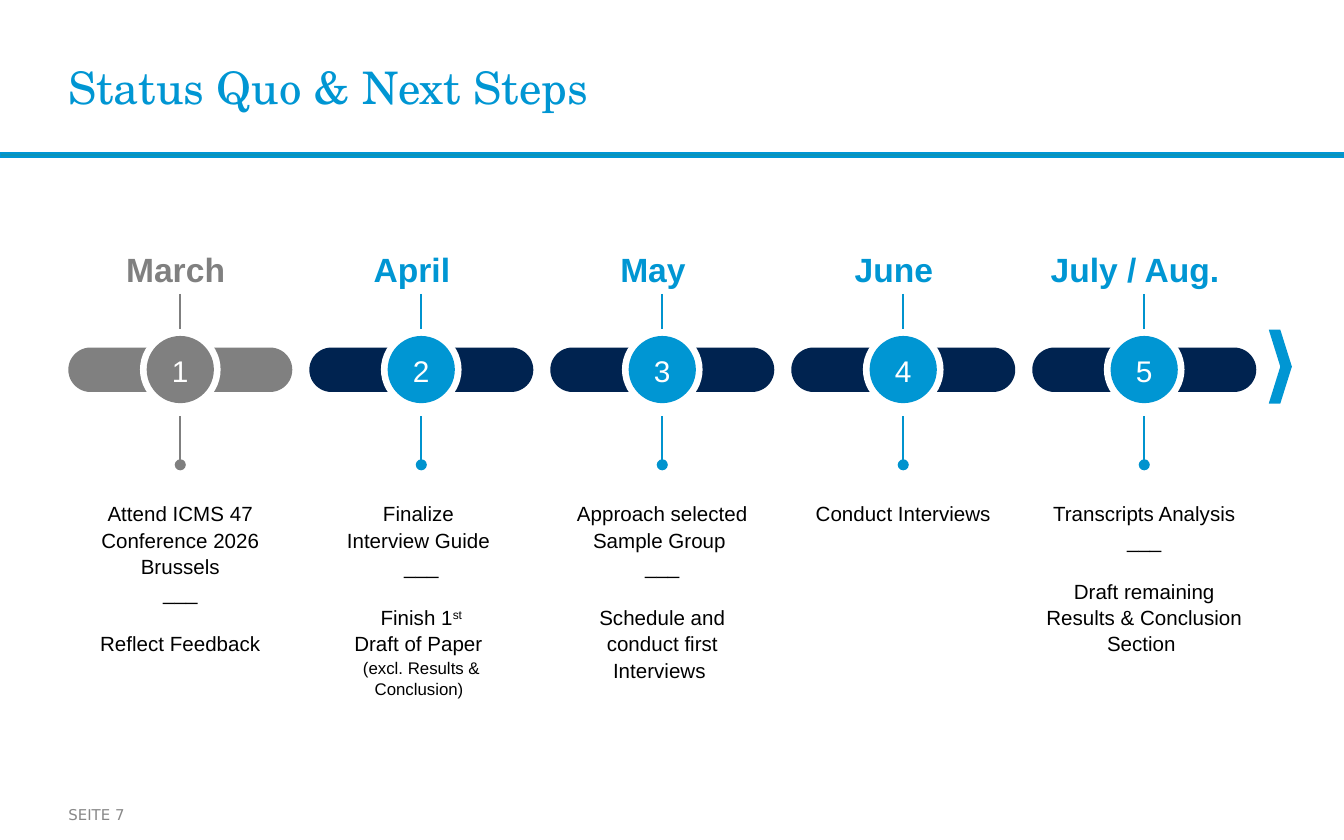
"""Build the Status Quo & Next Steps timeline slide."""
from lxml.etree import SubElement
from pptx import Presentation
from pptx.dml.color import RGBColor
from pptx.enum.shapes import MSO_CONNECTOR, MSO_SHAPE
from pptx.enum.text import MSO_ANCHOR, PP_ALIGN
from pptx.oxml.ns import qn
from pptx.util import Pt

theme = {
    "blue": RGBColor.from_string("0096D3"),
    "line": RGBColor.from_string("0093CE"),
    "rule": RGBColor.from_string("0C94B7"),
    "navy": RGBColor.from_string("002350"),
    "gray": RGBColor.from_string("808080"),
    "stem": RGBColor.from_string("7F7F7F"),
    "foot": RGBColor.from_string("888888"),
    "black": RGBColor.from_string("000000"),
    "white": RGBColor.from_string("FFFFFF"),
    "title": 24, "month": 18, "count": 16, "body": 11, "note": 9, "page": 8,
    "sans": "Arial", "serif": "TeX Gyre Schola", "small": "DejaVu Sans",
}

deck = Presentation()
deck.slide_width, deck.slide_height = Pt(720), Pt(450)
slide = deck.slides.add_slide(deck.slide_layouts[6])
shapes = slide.shapes


def draw(kind, x, y, w, h, fill):
    shape = shapes.add_shape(kind, Pt(x), Pt(y), Pt(w), Pt(h))
    shape.shadow.inherit = False
    shape.fill.solid()
    shape.fill.fore_color.rgb = theme[fill]
    shape.line.fill.background()
    return shape


def write(shape, *paras, size="body", color="black", font="sans", bold=False,
          align=PP_ALIGN.CENTER, anchor=MSO_ANCHOR.TOP, inset=(7.2, 3.6, 7.2, 3.6),
          lead=1.07, gap=0):
    frame = shape.text_frame
    frame.word_wrap = True
    frame.vertical_anchor = anchor
    frame.margin_left, frame.margin_top, frame.margin_right, frame.margin_bottom = map(Pt, inset)
    for i, runs in enumerate(paras):
        para = frame.add_paragraph() if i else frame.paragraphs[0]
        para.alignment, para.line_spacing = align, lead
        if i > 1:
            para.space_before = Pt(gap)
        for text, *style in [(runs,)] if isinstance(runs, str) else runs:
            for j, part in enumerate(text.split("\n")):
                if j:
                    para.add_line_break()
                if not part:
                    continue
                run = para.add_run()
                run.text = part
                run.font.name, run.font.bold = theme[font], bold
                run.font.size = Pt(theme["note" if "note" in style else size])
                run.font.color.rgb = theme[color]
                if "super" in style:
                    run.font._element.set("baseline", "30000")


bar = draw(MSO_SHAPE.RECTANGLE, 0, 82, 720, 2.2, "rule")
bar.line.color.rgb = theme["blue"]
bar.line.width = Pt(1)

page = shapes.add_textbox(Pt(36.6), Pt(426.2), Pt(70.6), Pt(20.2))
write(page, "SEITE 7", size="page", color="foot", font="small", align=PP_ALIGN.LEFT,
      anchor=MSO_ANCHOR.MIDDLE, inset=(0, 3.6, 0, 3.6), lead=1)
title = shapes.add_textbox(Pt(36.6), Pt(10.8), Pt(564.5), Pt(71.3))
write(title, "Status Quo & Next Steps", size="title", color="blue", font="serif",
      align=PP_ALIGN.LEFT, anchor=MSO_ANCHOR.MIDDLE, inset=(0, 0, 0, 0), lead=1)

steps = [
    ("March", 78, 2.5, "Attend ICMS 47 Conference 2026 Brussels", "Reflect Feedback"),
    ("April", 78, 5, "Finalize \nInterview Guide ",
     [("Finish 1",), ("st\n", "super"), ("Draft of Paper \n",),
      ("(excl. Results & Conclusion) ", "note")]),
    ("May", 78, 5, "Approach selected Sample Group ",
     "Schedule and conduct first Interviews "),
    ("June", 78, 5, "Conduct Interviews", None),
    ("July / Aug.", 111.6, 5, "Transcripts Analysis",
     "Draft remaining Results & Conclusion Section "),
]

for n, (month, wide, shift, task, then) in enumerate(steps):
    left = 36.6 + 129.1 * n
    mid = left + 60
    band, tint, ink = ("navy", "blue", "line") if n else ("gray", "gray", "stem")

    pill = draw(MSO_SHAPE.ROUNDED_RECTANGLE, left, 186.2, 120, 23.8, band)
    pill.adjustments[0] = 0.5
    draw(MSO_SHAPE.OVAL, mid - 21.6, 176.4, 43.2, 43.2, "white")
    disc = draw(MSO_SHAPE.OVAL, mid - 18, 180, 36, 36, tint)
    write(disc, str(n + 1), size="count", color="white", anchor=MSO_ANCHOR.MIDDLE)

    label = shapes.add_textbox(Pt(mid - wide / 2), Pt(128.2), Pt(wide), Pt(28.8))
    write(label, month, size="month", color=tint, bold=True,
          inset=(7.2 - shift, 3.6, 7.2 + shift, 3.6))
    note = shapes.add_textbox(Pt(left), Pt(264.2), Pt(120), Pt(100))
    write(note, *([task, "___", then] if then else [task]), gap=13.2)

    for top, end, dot in [(157.5, 176.4, False), (223, 249, True)]:
        stem = shapes.add_connector(MSO_CONNECTOR.STRAIGHT, Pt(mid), Pt(top), Pt(mid), Pt(end))
        stem.line.color.rgb = theme[ink]
        stem.line.width = Pt(1)
        if dot:
            SubElement(stem.line._get_or_add_ln(), qn("a:tailEnd"), type="oval")
        SubElement(stem._element.spPr, qn("a:effectLst"))

draw(MSO_SHAPE.CHEVRON, 679.7, 176.6, 12.4, 39.6, "blue")

deck.save("out.pptx")
